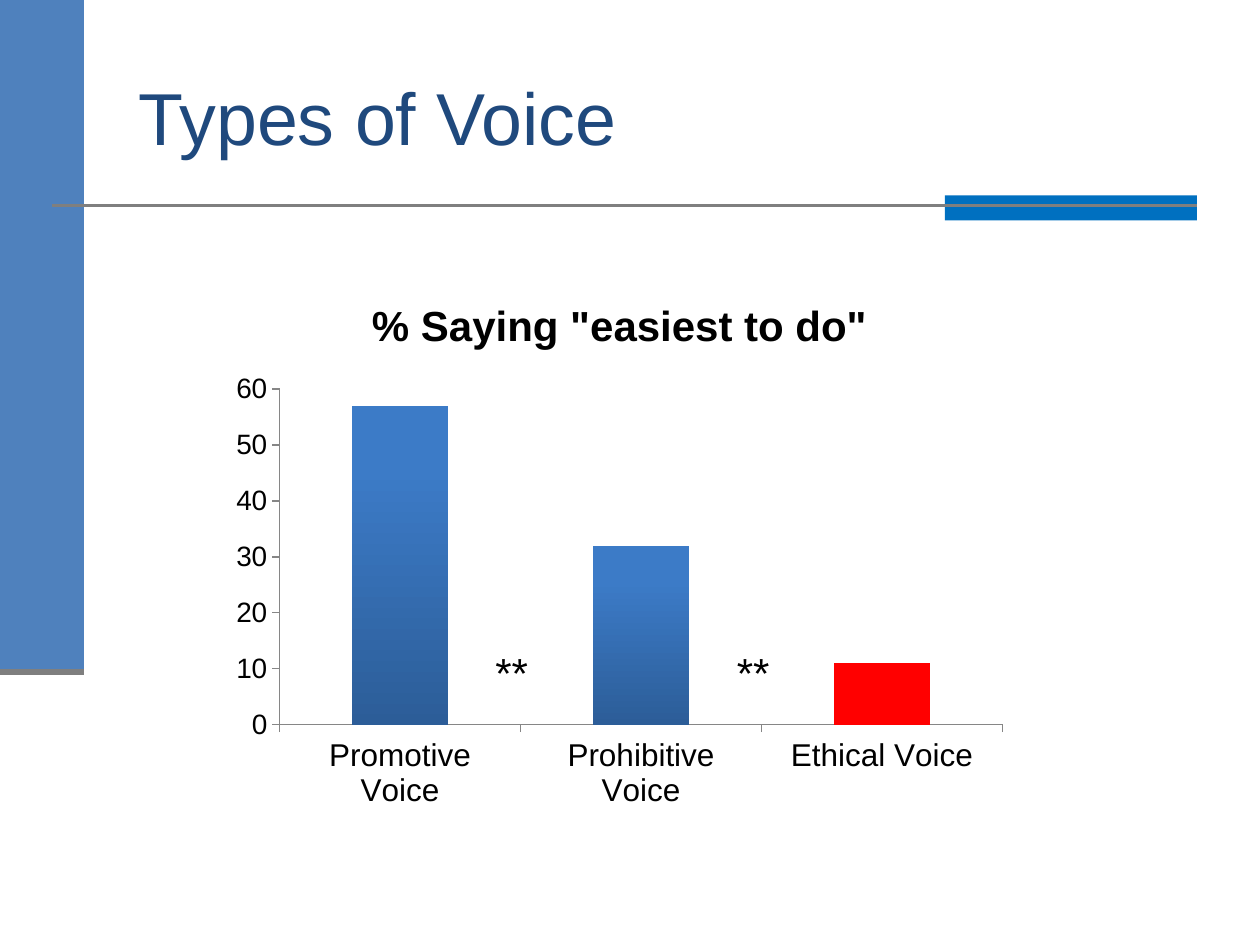
from pptx import Presentation
from pptx.chart.data import CategoryChartData
from pptx.dml.color import RGBColor
from pptx.enum.chart import XL_CHART_TYPE as ChartType, XL_TICK_MARK as TickMark
from pptx.enum.shapes import MSO_CONNECTOR as Connector, MSO_SHAPE as Shape
from pptx.enum.text import MSO_ANCHOR as Anchor, MSO_AUTO_SIZE as AutoSize, PP_ALIGN as Align
from pptx.oxml.ns import qn
from pptx.util import Pt

FONT = "Arial"
COLORS = {
    "sidebar": "4F81BD",
    "accent": "0070C0",
    "rule": "7F7F7F",
    "title": "1F497D",
    "text": "000000",
    "axis": "868686",
    "bar_bottom": "2C5D98",
    "bar_top": "3C7BC7",
    "highlight": "FF0000",
}


def color(name):
    return RGBColor.from_string(COLORS[name])


def style_font(font, size, name="text", bold=False):
    font.name = FONT
    font.size = Pt(size)
    font.bold = bold
    font.color.rgb = color(name)


def add_block(slide, left, top, width, height, fill):
    block = slide.shapes.add_shape(Shape.RECTANGLE, Pt(left), Pt(top), Pt(width), Pt(height))
    block.shadow.inherit = False
    block.fill.solid()
    block.fill.fore_color.rgb = color(fill)
    block.line.fill.background()


def add_rule(slide, left, right, y, weight):
    rule = slide.shapes.add_connector(Connector.STRAIGHT, Pt(left), Pt(y), Pt(right), Pt(y))
    rule.line.color.rgb = color("rule")
    rule.line.width = Pt(weight)
    properties = rule._element.spPr
    properties.append(properties.makeelement(qn("a:effectLst"), {}))


def add_sidebar(slide, left, top, width, height):
    add_block(slide, left, top, width, height, "sidebar")
    add_rule(slide, left, left + width, top + height, 3.5)


def add_divider(slide, left, top, width, height):
    accent_width = 144
    right = left + width
    add_block(slide, right - accent_width, top, accent_width, height, "accent")
    add_rule(slide, left, right, top + 6, 1.5)


def place_title(slide, left, top, width, height, text):
    title = slide.shapes.title
    title.left, title.top, title.width, title.height = Pt(left), Pt(top), Pt(width), Pt(height)
    frame = title.text_frame
    frame.vertical_anchor = Anchor.MIDDLE
    paragraph = frame.paragraphs[0]
    paragraph.alignment = Align.LEFT
    run = paragraph.add_run()
    run.text = text
    style_font(run.font, 42, "title")


def format_axis(axis, size):
    axis.has_major_gridlines = False
    axis.major_tick_mark = TickMark.OUTSIDE
    axis.minor_tick_mark = TickMark.NONE
    axis.format.line.color.rgb = color("axis")
    axis.format.line.width = Pt(0.75)
    style_font(axis.tick_labels.font, size)


def add_voice_chart(slide, left, top, width, height):
    data = CategoryChartData()
    data.categories = ["Promotive Voice", "Prohibitive Voice", "Ethical Voice"]
    data.add_series("Series 1", [57, 32, 11])
    chart = slide.shapes.add_chart(
        ChartType.COLUMN_CLUSTERED, Pt(left), Pt(top), Pt(width), Pt(height), data
    ).chart
    style_font(chart.font, 10)
    chart.has_legend = False

    chart.has_title = True
    run = chart.chart_title.text_frame.paragraphs[0].add_run()
    run.text = '% Saying "easiest to do"'
    style_font(run.font, 24, bold=True)
    chart.chart_title.include_in_layout = False

    format_axis(chart.category_axis, 18)
    format_axis(chart.value_axis, 16)
    chart.value_axis.minimum_scale = 0
    chart.value_axis.maximum_scale = 60
    chart.value_axis.major_unit = 10

    # Bars shade upwards; the last one is highlighted
    plot = chart.plots[0]
    plot.gap_width = 150
    plot.vary_by_categories = False
    series = plot.series[0]
    fill = series.format.fill
    fill.gradient()
    fill.gradient_angle = 90
    for stop, name, position in zip(fill.gradient_stops, ("bar_bottom", "bar_top"), (0, 0.8)):
        stop.color.rgb = color(name)
        stop.position = position
    highlight = series.points[2].format.fill
    highlight.solid()
    highlight.fore_color.rgb = color("highlight")


def add_significance_mark(slide, left, top, width, height):
    box = slide.shapes.add_textbox(Pt(left), Pt(top), Pt(width), Pt(height))
    frame = box.text_frame
    frame.word_wrap = False
    frame.auto_size = AutoSize.SHAPE_TO_FIT_TEXT
    run = frame.paragraphs[0].add_run()
    run.text = "**"
    style_font(run.font, 24)


def main():
    presentation = Presentation()
    presentation.slide_width, presentation.slide_height = Pt(720), Pt(540)
    slide = presentation.slides.add_slide(presentation.slide_layouts[5])

    # Frame and title
    add_sidebar(slide, 0, 0, 48, 384)
    add_divider(slide, 30, 111.6, 654, 14.4)
    place_title(slide, 72, 21.6, 612, 90, "Types of Voice")

    # Chart with a mark between neighbouring bars
    add_voice_chart(slide, 126, 156, 456, 312)
    for left in (276, 414):
        add_significance_mark(slide, left, 366, 33, 36.5)

    presentation.save("out.pptx")


if __name__ == "__main__":
    main()
